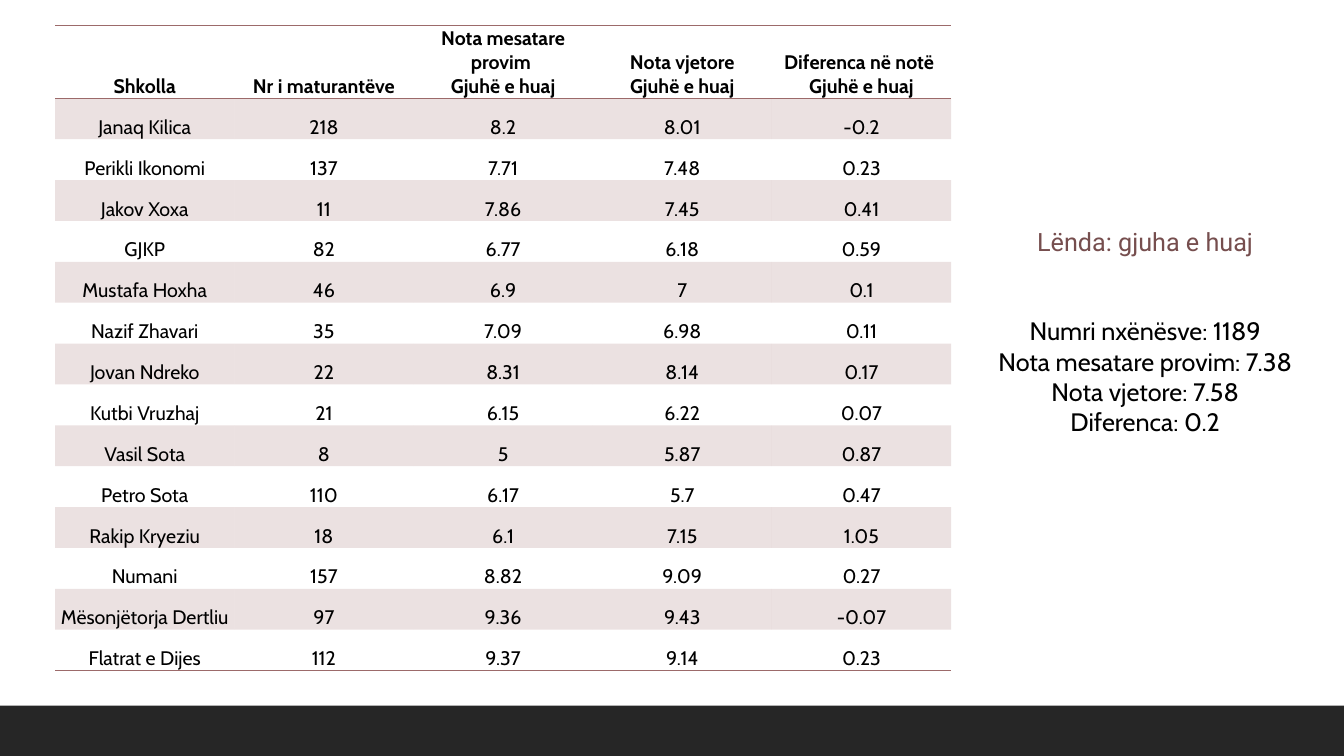
from dataclasses import dataclass

from pptx import Presentation
from pptx.dml.color import RGBColor as RGB
from pptx.enum.shapes import MSO_SHAPE as SHAPE
from pptx.enum.text import MSO_ANCHOR as ANCHOR, MSO_AUTO_SIZE as AUTO_SIZE, PP_ALIGN as ALIGN
from pptx.oxml import parse_xml
from pptx.oxml.ns import nsdecls, qn
from pptx.util import Pt

HEADERS = [
    ["Shkolla"],
    ["Nr i maturantëve"],
    ["Nota mesatare provim ", "Gjuhë e huaj"],
    ["Nota vjetore", "Gjuhë e huaj"],
    ["Diferenca në notë ", "Gjuhë e huaj"],
]
SCHOOLS = [
    ("Janaq Kilica", "218", "8.2", "8.01", "-0.2"),
    ("Perikli Ikonomi", "137", "7.71", "7.48", "0.23"),
    ("Jakov Xoxa", "11", "7.86", "7.45", "0.41"),
    ("GJKP", "82", "6.77", "6.18", "0.59"),
    ("Mustafa Hoxha", "46", "6.9", "7", "0.1"),
    ("Nazif Zhavari", "35", "7.09", "6.98", "0.11"),
    ("Jovan Ndreko", "22", "8.31", "8.14", "0.17"),
    ("Kutbi Vruzhaj", "21", "6.15", "6.22", "0.07"),
    ("Vasil Sota", "8", "5", "5.87", "0.87"),
    ("Petro Sota", "110", "6.17", "5.7", "0.47"),
    ("Rakip Kryeziu", "18", "6.1", "7.15", "1.05"),
    ("Numani", "157", "8.82", "9.09", "0.27"),
    ("Mësonjëtorja Dertliu", "97", "9.36", "9.43", "-0.07"),
    ("Flatrat e Dijes", "112", "9.37", "9.14", "0.23"),
]
SUBJECT = "Lënda: gjuha e huaj"
SUMMARY = [
    "Numri nxënësve: 1189",
    "Nota mesatare provim: 7.38",
    "Nota vjetore: 7.58",
    "Diferenca: 0.2",
]


@dataclass(frozen=True)
class Theme:
    ink: str = "000000"
    accent: str = "9C6A6A"
    subject: str = "764E4E"
    footer: str = "262626"
    band_alpha: int = 20
    body_font: str = "Cabin"
    subject_font: str = "Roboto"
    table_size: int = 14
    side_size: int = 18


T = Theme()
SLIDE_W, SLIDE_H = 960, 540
FOOTER_H = 36
TABLE_X, TABLE_Y, TABLE_W = 39.4, 18.2, 640
HEADER_H, ROW_H = 52, 29.2
SIDE_X, SIDE_Y, SIDE_W, SIDE_H = 685.5, 158.4, 265, 160
SUMMARY_GAP = 42
NO_STYLE = "{2D5ABB26-0587-4C30-8999-92F81FD0307C}"


def add_run(p, text, size, color=T.ink, font=T.body_font, bold=False):
    p.alignment = ALIGN.CENTER
    r = p.add_run()
    r.text = text
    r.font.size, r.font.name, r.font.bold = Pt(size), font, bold
    r.font.color.rgb = RGB.from_string(color)


def add_borders(cell, sides):
    tc_pr = cell._tc.get_or_add_tcPr()
    for i, side in enumerate(sides):
        tc_pr.insert(i, parse_xml(
            f'<a:ln{side} {nsdecls("a")} w="{Pt(1)}"><a:solidFill>'
            f'<a:srgbClr val="{T.accent}"/></a:solidFill></a:ln{side}>'))


def fill_cell(cell, banded):
    if not banded:
        cell.fill.background()
        return
    cell.fill.solid()
    cell.fill.fore_color.rgb = RGB.from_string(T.accent)
    color = next(cell._tc.tcPr.iter(qn("a:srgbClr")))
    color.append(parse_xml(f'<a:alpha {nsdecls("a")} val="{T.band_alpha * 1000}"/>'))


def write_cell(cell, lines, bold):
    cell.margin_left = cell.margin_right = cell.margin_top = Pt(0.7)
    cell.margin_bottom = Pt(0)
    cell.vertical_anchor = ANCHOR.BOTTOM
    p = cell.text_frame.paragraphs[0]
    for i, line in enumerate(lines):
        if i:
            p.add_line_break()
        add_run(p, line, T.table_size, bold=bold)


def add_footer(s):
    sp = s.shapes.add_shape(SHAPE.RECTANGLE, Pt(0), Pt(SLIDE_H - FOOTER_H),
                            Pt(SLIDE_W), Pt(FOOTER_H))
    sp.shadow.inherit = False
    sp.fill.solid()
    sp.fill.fore_color.rgb = RGB.from_string(T.footer)
    sp.line.fill.background()


def add_grades(s):
    rows = [HEADERS] + [[[value] for value in school] for school in SCHOOLS]
    last = len(rows) - 1
    frame = s.shapes.add_table(len(rows), len(HEADERS), Pt(TABLE_X), Pt(TABLE_Y),
                               Pt(TABLE_W), Pt(HEADER_H + ROW_H * last))
    table = frame.table
    table.horz_banding = False
    table._tbl.tblPr.find(qn("a:tableStyleId")).text = NO_STYLE
    for column in table.columns:
        column.width = Pt(TABLE_W / len(HEADERS))
    for i, row in enumerate(rows):
        table.rows[i].height = Pt(ROW_H if i else HEADER_H)
        for j, lines in enumerate(row):
            cell = table.cell(i, j)
            write_cell(cell, lines, bold=i == 0)
            fill_cell(cell, banded=i % 2 == 1)
            add_borders(cell, {0: "TB", last: "B"}.get(i, ""))


def add_summary(s):
    sp = s.shapes.add_textbox(Pt(SIDE_X), Pt(SIDE_Y), Pt(SIDE_W), Pt(SIDE_H))
    tf = sp.text_frame
    tf.word_wrap = True
    tf.auto_size = AUTO_SIZE.SHAPE_TO_FIT_TEXT
    add_run(tf.paragraphs[0], SUBJECT, T.side_size, T.subject, T.subject_font)
    for i, line in enumerate(SUMMARY):
        p = tf.add_paragraph()
        p.space_before = Pt(0 if i else SUMMARY_GAP)
        add_run(p, line, T.side_size)


def main():
    prs = Presentation()
    prs.slide_width, prs.slide_height = Pt(SLIDE_W), Pt(SLIDE_H)
    s = prs.slides.add_slide(prs.slide_layouts[6])
    add_footer(s)
    add_grades(s)
    add_summary(s)
    prs.save("out.pptx")


if __name__ == "__main__":
    main()
